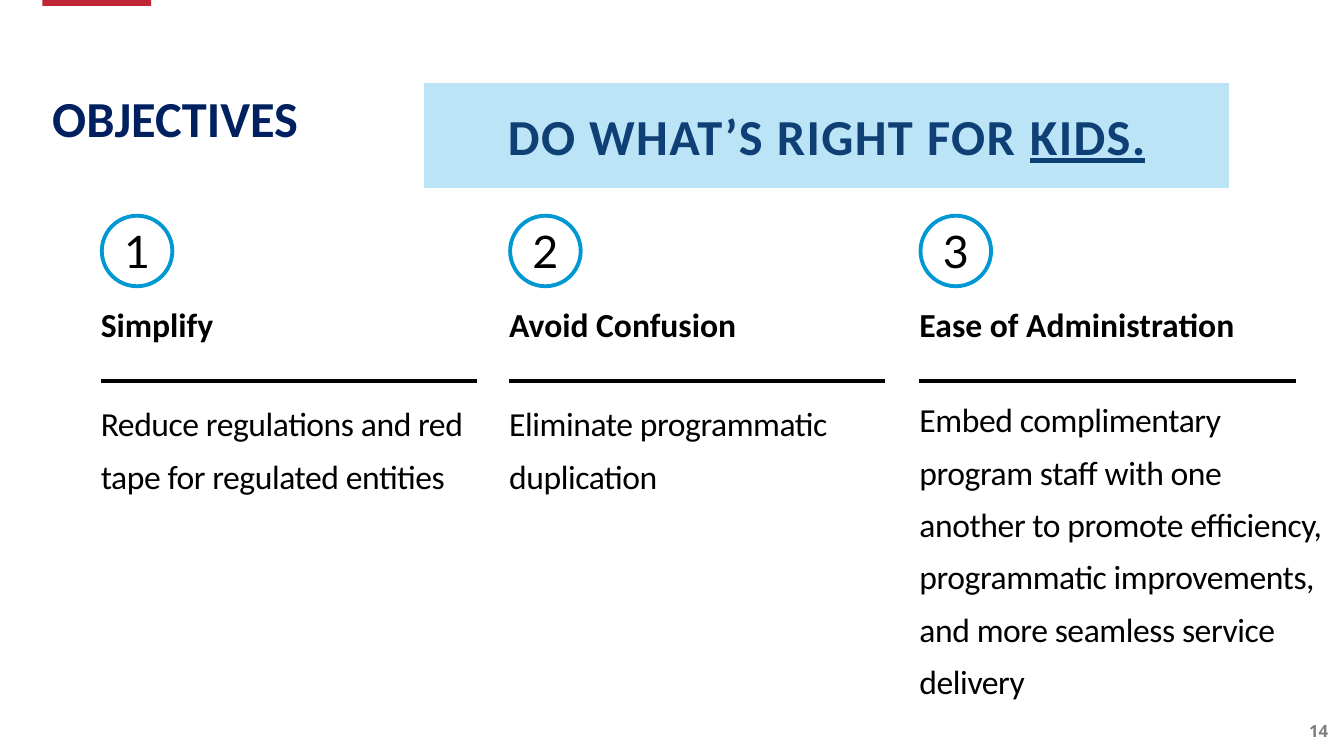
import pptx
import pptx.util
import pptx.dml.color
import pptx.enum.shapes
import pptx.enum.text
import pptx.oxml.ns
import lxml.etree

Inches = pptx.util.Inches
Pt = pptx.util.Pt
ALIGN = pptx.enum.text.PP_ALIGN
ANCHOR = pptx.enum.text.MSO_ANCHOR
SHAPES = pptx.enum.shapes.MSO_SHAPE

COLORS = {
    "red": "C12637",
    "navy": "002060",
    "banner": "BCE4F7",
    "banner_text": "0E3F75",
    "ring": "0098D3",
    "gray": "808080",
    "black": "000000",
    "white": "FFFFFF",
}

OBJECTIVES = [
    ((1, 2.14, 3.73), "Simplify", 3.88, 3.73,
     "Reduce regulations and red tape for regulated entities"),
    ((5.05, 2.14, 3.73), "Avoid Confusion", 3.88, 3.73,
     "Eliminate programmatic duplication"),
    ((9.12, 2.14, 3.73), "Ease of Administration", 3.84, 4.03,
     "Embed complimentary program staff with one another to promote efficiency, "
     "programmatic improvements, and more seamless service delivery"),
]


def rgb(name):
    """Return the named colour."""
    return pptx.dml.color.RGBColor.from_string(COLORS[name])


def style_run(run, size, color, bold=False, font="Calibri", tracking=0):
    """Format one run; tracking is in points."""
    run.font.size = Pt(size)
    run.font.name = font
    run.font.bold = bold
    run.font.color.rgb = rgb(color)
    if tracking:
        run.font._element.set("spc", str(round(tracking * 100)))


def add_text(slide, box, text, size, color, inset=True, spacing=1.0,
             align=ALIGN.LEFT, anchor=ANCHOR.TOP, **style):
    """Place a wrapped text box with one formatted paragraph."""
    label = slide.shapes.add_textbox(*map(Inches, box))
    frame = label.text_frame
    frame.word_wrap = True
    frame.vertical_anchor = anchor
    if not inset:
        frame.margin_left = frame.margin_right = 0
        frame.margin_top = frame.margin_bottom = 0
    frame.text = text
    paragraph = frame.paragraphs[0]
    paragraph.alignment = align
    paragraph.line_spacing = spacing
    style_run(paragraph.runs[0], size, color, **style)


def add_block(slide, kind, box, fill, line=None, width=1):
    """Place a flat preset shape and return it."""
    block = slide.shapes.add_shape(kind, *map(Inches, box))
    block.shadow.inherit = False
    block.fill.solid()
    block.fill.fore_color.rgb = rgb(fill)
    if line:
        block.line.color.rgb = rgb(line)
        block.line.width = Pt(width)
    else:
        block.line.fill.background()
    block.text_frame.vertical_anchor = ANCHOR.MIDDLE
    block.text_frame.paragraphs[0].alignment = ALIGN.CENTER
    return block


def add_rule(slide, left, top, width):
    """Draw a horizontal black rule."""
    rule = slide.shapes.add_connector(
        pptx.enum.shapes.MSO_CONNECTOR.STRAIGHT,
        Inches(left), Inches(top), Inches(left + width), Inches(top))
    rule.line.color.rgb = rgb("black")
    rule.line.width = Pt(3)
    lxml.etree.SubElement(rule._element.spPr, pptx.oxml.ns.qn("a:effectLst"))


def add_frame(slide):
    """Add the top accent, the heading and the page number."""
    add_block(slide, SHAPES.RECTANGLE, (0.42, -0.04, 1.08, 0.1), "red")
    add_text(slide, (12.83, 7, 0.5, 0.5), "14", 12, "gray", align=ALIGN.CENTER,
             anchor=ANCHOR.MIDDLE, bold=True, font="Open Sans")
    add_text(slide, (0.42, 0.88, 11.5, 0.62), "OBJECTIVES", 36, "navy",
             spacing=0.9, bold=True)


def add_banner(slide, box):
    """Add the motto banner with its last word underlined."""
    banner = add_block(slide, SHAPES.RECTANGLE, box, "banner", "white")
    motto = banner.text_frame.paragraphs[0]
    for words, underlined in (("DO WHAT’S RIGHT FOR ", False), ("KIDS.", True)):
        run = motto.add_run()
        run.text = words
        style_run(run, 36, "banner_text", bold=True, tracking=1)
        run.font.underline = underlined


def add_objective(slide, box, number, heading, detail_top, detail_width, detail):
    """Add one numbered objective: ring, heading, rule and detail."""
    left, top, width = box
    ring = add_block(slide, SHAPES.OVAL, (left + 0.01, top, 0.7, 0.7),
                     "white", "ring", 2.75)
    numeral = ring.text_frame.paragraphs[0]
    numeral.text = str(number)
    style_run(numeral.runs[0], 32, "black", font="Lato")
    add_text(slide, (left, top + 0.85, width, 0.41), heading, 24, "black",
             inset=False, spacing=1.06, bold=True)
    add_rule(slide, left, top + 1.64, width)
    add_text(slide, (left, detail_top, detail_width, 0.73), detail, 24, "black",
             inset=False, spacing=1.3, tracking=-0.3)


def main():
    """Build and save the slide."""
    deck = pptx.Presentation()
    deck.slide_width = Inches(13.33)
    deck.slide_height = Inches(7.5)
    slide = deck.slides.add_slide(deck.slide_layouts[6])
    add_frame(slide)
    for number, (box, heading, top, width, detail) in enumerate(OBJECTIVES, 1):
        add_objective(slide, box, number, heading, top, width, detail)
    add_banner(slide, (4.2, 0.82, 8, 1.05))
    deck.save("out.pptx")


if __name__ == "__main__":
    main()
